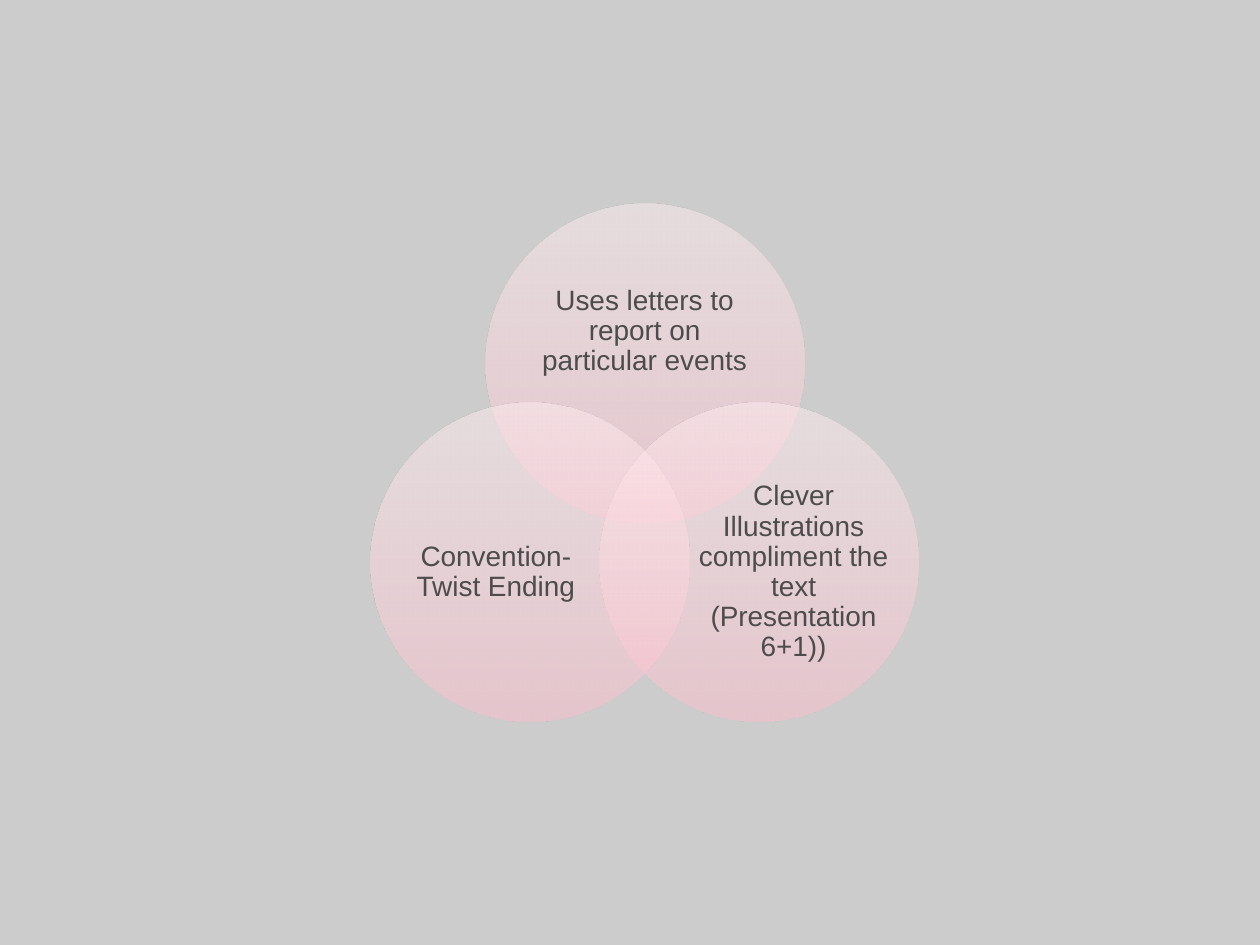
import math
from lxml import etree
from pptx import Presentation
from pptx.dml.color import RGBColor
from pptx.enum import shapes, text
from pptx.oxml import ns
from pptx.util import Pt

BACKGROUND = RGBColor(0xCC, 0xCC, 0xCC)
INK = RGBColor(0x4C, 0x4C, 0x4C)
STOPS = [
    (0, RGBColor(0xFF, 0xBD, 0xCD)),
    (35, RGBColor(0xFF, 0xD1, 0xDB)),
    (100, RGBColor(0xFF, 0xEE, 0xF1)),
]
OPACITY = 50

CENTER_X, CENTER_Y = 368.4, 283.4
ORBIT = 75.7
DIAMETER = 182.2

# angle, label, label offset, label size
CIRCLES = [
    (-90, "Uses letters to report on particular events", (0, -18.2), (133.9, 82)),
    (30, "Clever Illustrations compliment the text (Presentation 6+1))",
     (19.5, 5.8), (109.4, 100.1)),
    (150, "Convention- Twist Ending", (-19.5, 5.8), (109.4, 100.1)),
]


def centered(x, y, width, height):
    return Pt(x - width / 2), Pt(y - height / 2), Pt(width), Pt(height)


def fill_gradient(shape):
    shape.fill.background()
    blank = shape._element.spPr.find(ns.qn("a:noFill"))
    gradient = etree.Element(ns.qn("a:gradFill"), rotWithShape="1")
    stops = etree.SubElement(gradient, ns.qn("a:gsLst"))
    for position, color in STOPS:
        stop = etree.SubElement(stops, ns.qn("a:gs"), pos=str(position * 1000))
        shade = etree.SubElement(stop, ns.qn("a:srgbClr"), val=str(color))
        etree.SubElement(shade, ns.qn("a:alpha"), val=str(OPACITY * 1000))
    etree.SubElement(gradient, ns.qn("a:lin"), ang=str(270 * 60000), scaled="1")
    blank.getparent().replace(blank, gradient)


def add_circle(page, x, y):
    circle = page.shapes.add_shape(
        shapes.MSO_SHAPE.OVAL, *centered(x, y, DIAMETER, DIAMETER))
    circle.shadow.inherit = False
    circle.line.fill.background()
    fill_gradient(circle)


def add_label(page, label, x, y, size):
    box = page.shapes.add_textbox(*centered(x, y, *size))
    frame = box.text_frame
    frame.word_wrap = True
    frame.vertical_anchor = text.MSO_ANCHOR.MIDDLE
    frame.margin_left = frame.margin_right = 0
    frame.margin_top = frame.margin_bottom = 0
    para = frame.paragraphs[0]
    para.text = label
    para.alignment = text.PP_ALIGN.CENTER
    para.line_spacing = 0.9
    para.font.name = "Arial"
    para.font.size = Pt(16)
    para.font.color.rgb = INK


def main():
    deck = Presentation()
    deck.slide_width, deck.slide_height = Pt(720), Pt(540)
    page = deck.slides.add_slide(deck.slide_layouts[6])
    page.background.fill.solid()
    page.background.fill.fore_color.rgb = BACKGROUND
    for angle, label, (shift_x, shift_y), size in CIRCLES:
        x = CENTER_X + ORBIT * math.cos(math.radians(angle))
        y = CENTER_Y + ORBIT * math.sin(math.radians(angle))
        add_circle(page, x, y)
        add_label(page, label, x + shift_x, y + shift_y, size)
    deck.save("out.pptx")


if __name__ == "__main__":
    main()
